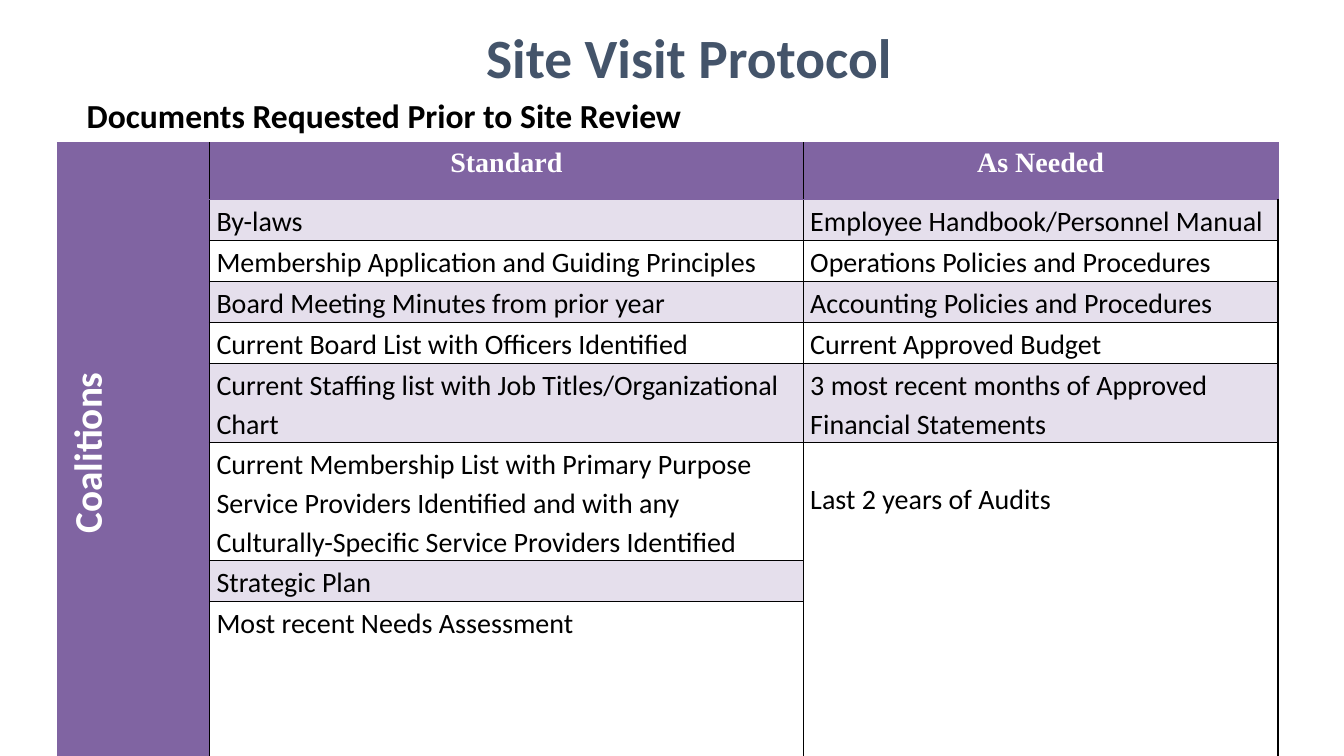
from lxml.etree import SubElement
from pptx import Presentation
from pptx.dml.color import RGBColor
from pptx.enum.text import MSO_ANCHOR, MSO_AUTO_SIZE, PP_ALIGN
from pptx.oxml import parse_xml
from pptx.oxml.ns import nsdecls, qn
from pptx.util import Pt

# Content
TITLE = "Site Visit Protocol"
LEAD = "Documents Requested Prior to Site Review"
GROUP = "Coalitions"
HEADS = ["Standard", "As Needed"]
NEEDS = [
    ("By-laws", "Employee Handbook/Personnel Manual"),
    ("Membership Application and Guiding Principles",
     "Operations Policies and Procedures"),
    ("Board Meeting Minutes from prior year",
     "Accounting Policies and Procedures"),
    ("Current Board List with Officers Identified", "Current Approved Budget"),
    ("Current Staffing list with Job Titles/Organizational Chart",
     "3 most recent months of Approved Financial Statements"),
    ("Current Membership List with Primary Purpose Service Providers "
     "Identified and with any Culturally-Specific Service Providers Identified",
     "Last 2 years of Audits"),
    ("Strategic Plan", ""),
    ("Most recent Needs Assessment", ""),
]
AUDIT = 6  # row where the audit cell starts

# Look
HEX = {"slate": "44546A", "black": "000000", "white": "FFFFFF",
       "purple": "8064A2", "lilac": "E5DFEC"}
SANS, SERIF = "Calibri", "Times New Roman"
LOOK = {
    "title": {"name": SANS, "size": Pt(39.6), "bold": True, "ink": "slate"},
    "lead": {"name": SANS, "size": Pt(24), "bold": True, "ink": "black"},
    "group": {"name": SANS, "size": Pt(28), "bold": True, "ink": "white"},
    "head": {"name": SERIF, "size": Pt(20), "bold": True, "ink": "white"},
    "item": {"name": SANS, "size": Pt(20), "bold": False, "ink": "black"},
}
COLS = [108.7, 424.1, 339.1]
HEAD_H, ROW_H = 40.3, 29.3


def style(para, look, space, align):
    para.line_spacing, para.alignment = space, align
    for key, val in LOOK[look].items():
        if key == "ink":
            para.font.color.rgb = RGBColor.from_string(HEX[val])
        else:
            setattr(para.font, key, val)


def place(shape, box):
    for key, val in zip(("left", "top", "width", "height"), box):
        setattr(shape, key, Pt(val))


def write(cell, text, look, align=PP_ALIGN.LEFT):
    cell.text = text
    style(cell.text_frame.paragraphs[0], look, 1.15, align)


def border(cell, inks):
    props = cell._tc.get_or_add_tcPr()
    for pos, (side, ink) in enumerate(zip("LRTB", inks)):
        props.insert(pos, parse_xml(
            f'<a:ln{side} {nsdecls("a")} w="12700"><a:solidFill>'
            f'<a:srgbClr val="{HEX[ink]}"/></a:solidFill></a:ln{side}>'))


deck = Presentation()
deck.slide_width, deck.slide_height = Pt(960), Pt(540)
slide = deck.slides.add_slide(deck.slide_layouts[1])

# Title and lead line
title, body = slide.shapes.title, slide.placeholders[1]
for shape, text, look, box, anchor, align in (
    (title, TITLE, "title", (97.9, 15.8, 788.4, 52.6),
     MSO_ANCHOR.BOTTOM, PP_ALIGN.CENTER),
    (body, LEAD, "lead", (54.7, 67.7, 805, 34.6),
     MSO_ANCHOR.TOP, PP_ALIGN.LEFT),
):
    place(shape, box)
    frame = shape.text_frame
    frame.text = text
    frame.vertical_anchor, frame.auto_size = anchor, MSO_AUTO_SIZE.NONE
    para = frame.paragraphs[0]
    props = para._p.get_or_add_pPr()
    props.set("marL", "0")
    props.set("indent", "0")
    SubElement(props, qn("a:buNone"))
    para.space_before = Pt(0)
    style(para, look, 0.9, align)

# Table grid
last = len(NEEDS)
holder = slide.shapes.add_table(last + 1, 3, Pt(41), Pt(102.2),
                                Pt(sum(COLS)), Pt(350))
table = holder.table
table.first_row = table.horz_banding = False
for col, width in zip(table.columns, COLS):
    col.width = Pt(width)
for num, row in enumerate(table.rows):
    row.height = Pt(ROW_H if num else HEAD_H)
holder.height = Pt(350)

# Fills, margins and borders
for r in range(last + 1):
    for c in range(3):
        cell = table.cell(r, c)
        for key, val in {"left": 5, "right": 5, "top": 0, "bottom": 0}.items():
            setattr(cell, f"margin_{key}", Pt(val))
        band = r % 2 and not (c == 2 and r >= AUDIT)
        fill = "purple" if r == 0 or c == 0 else "lilac" if band else None
        if fill:
            cell.fill.solid()
            cell.fill.fore_color.rgb = RGBColor.from_string(HEX[fill])
        else:
            cell.fill.background()
        rim = [c == 0, r == 0 and c == 2, r == 0 or (r == 1 and c > 0),
               r == 0 and c > 0]
        border(cell, ["purple" if on else "black" for on in rim])

# Words
for c, head in enumerate(HEADS, 1):
    write(table.cell(0, c), head, "head", PP_ALIGN.CENTER)
for r, pair in enumerate(NEEDS, 1):
    for c, text in enumerate(pair, 1):
        if text:
            write(table.cell(r, c), text, "item")

# Merged cells
audit = table.cell(AUDIT, 2)
audit.merge(table.cell(last, 2))
audit.margin_top = Pt(25)
group = table.cell(0, 0)
group.merge(table.cell(last, 0))
write(group, GROUP, "group", PP_ALIGN.CENTER)
group.vertical_anchor = MSO_ANCHOR.MIDDLE
group._tc.get_or_add_tcPr().set("vert", "vert270")
group.text_frame.paragraphs[0]._p.get_or_add_pPr().set("marL", str(Pt(6)))

deck.save("out.pptx")
